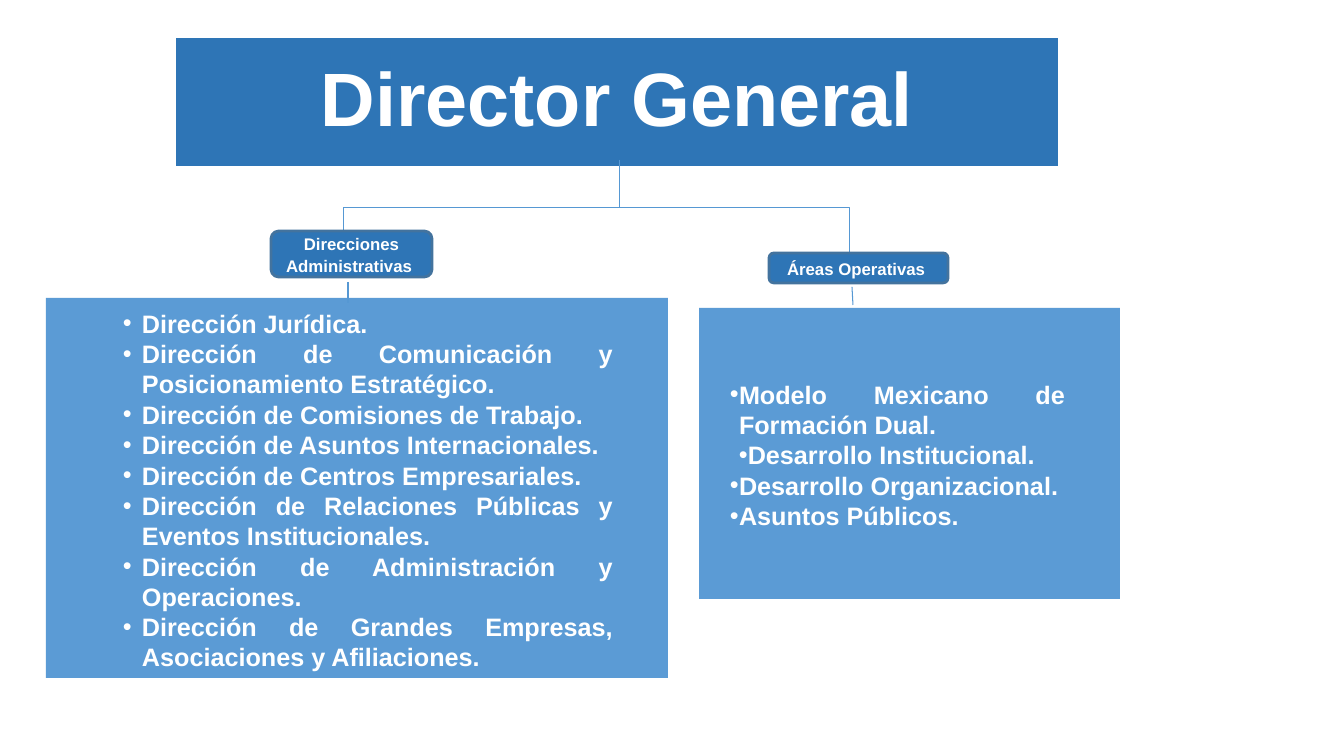
from dataclasses import dataclass

from lxml import etree
from pptx import Presentation
from pptx.dml.color import RGBColor
from pptx.enum.shapes import MSO_CONNECTOR, MSO_SHAPE
from pptx.enum.text import MSO_ANCHOR, MSO_AUTO_SIZE, PP_ALIGN
from pptx.oxml.ns import qn
from pptx.util import Pt

RECTANGLE = MSO_SHAPE.RECTANGLE
ROUNDED = MSO_SHAPE.ROUNDED_RECTANGLE
LEFT_BRACE = MSO_SHAPE.LEFT_BRACE
STRAIGHT = MSO_CONNECTOR.STRAIGHT
TOP, MIDDLE = MSO_ANCHOR.TOP, MSO_ANCHOR.MIDDLE
CENTER, JUSTIFY = PP_ALIGN.CENTER, PP_ALIGN.JUSTIFY
NO_AUTOFIT = MSO_AUTO_SIZE.NONE

DARK_BLUE = RGBColor(0x2E, 0x75, 0xB6)
LIGHT_BLUE = RGBColor(0x5B, 0x9B, 0xD5)
OUTLINE_BLUE = RGBColor(0x43, 0x73, 0x9E)
LINE_BLUE = RGBColor(0x56, 0x98, 0xD3)
WHITE = RGBColor(0xFF, 0xFF, 0xFF)

SLIDE_WIDTH, SLIDE_HEIGHT = 1344, 756
EMU_PER_PX = 12192000 / SLIDE_WIDTH
TITLE_BOX = (176, 38, 882, 128)
BRACE_BOX = (549, -45, 95, 506)
PADDING = 10
RIGHT_INSET = 55


@dataclass(frozen=True)
class Item:
    text: str
    margin: int
    indent: int


@dataclass(frozen=True)
class Panel:
    box: tuple[int, int, int, int]
    top_inset: int
    items: list[Item]


@dataclass(frozen=True)
class Label:
    box: tuple[int, int, int, int]
    text: str


@dataclass(frozen=True)
class Link:
    start: tuple[int, int]
    end: tuple[int, int]


ADMINISTRATIVE = [
    "Dirección Jurídica.",
    "Dirección de Comunicación y Posicionamiento Estratégico.",
    "Dirección de Comisiones de Trabajo.",
    "Dirección de Asuntos Internacionales.",
    "Dirección de Centros Empresariales.",
    "Dirección de Relaciones Públicas y Eventos Institucionales.",
    "Dirección de Administración y Operaciones.",
    "Dirección de Grandes Empresas, Asociaciones y Afiliaciones.",
]
OPERATIVE = [
    Item("Modelo Mexicano de Formación Dual.", 30, -9),
    Item("Desarrollo Institucional.", 20, 10),
    Item("Desarrollo Organizacional.", 30, -9),
    Item("Asuntos Públicos.", 30, -9),
]
PANELS = [
    Panel((699, 308, 421, 291), 71, OPERATIVE),
    Panel((46, 298, 622, 380), PADDING, [Item(text, 86, -19) for text in ADMINISTRATIVE]),
]
LABELS = [
    Label((769, 253, 179, 30), "Áreas Operativas "),
    Label((271, 231, 161, 46), "Direcciones Administrativas "),
]
LINKS = [Link((348, 282), (348, 303)), Link((852, 287), (853, 305))]


def px(length: int) -> int:
    return round(length * EMU_PER_PX)


def set_attributes(target, values: dict) -> None:
    for name, value in values.items():
        setattr(target, name, value)


def set_frame(text_frame, anchor, insets: tuple[int, int, int, int]) -> None:
    """Apply anchor, wrapping and left, top, right, bottom insets."""
    left, top, right, bottom = map(px, insets)
    set_attributes(text_frame, {
        "word_wrap": True, "auto_size": NO_AUTOFIT, "vertical_anchor": anchor,
        "margin_left": left, "margin_top": top,
        "margin_right": right, "margin_bottom": bottom,
    })


def write(paragraph, text: str, size: int, values: dict) -> None:
    set_attributes(paragraph, values)
    run = paragraph.add_run()
    run.text = text
    set_attributes(run.font, {"name": "Arial", "size": Pt(size), "bold": True})
    run.font.color.rgb = WHITE


def add_bullet(paragraph, item: Item) -> None:
    properties = paragraph._p.get_or_add_pPr()
    properties.set("marL", str(px(item.margin)))
    properties.set("indent", str(px(item.indent)))
    color = etree.SubElement(properties, qn("a:buClr"))
    etree.SubElement(color, qn("a:srgbClr"), val=str(WHITE))
    etree.SubElement(properties, qn("a:buFont"), typeface="Arial")
    etree.SubElement(properties, qn("a:buChar"), char="•")


def add_filled_shape(slide, kind, box: tuple[int, int, int, int], fill: RGBColor):
    shape = slide.shapes.add_shape(kind, *map(px, box))
    shape.shadow.inherit = False
    shape.fill.solid()
    shape.fill.fore_color.rgb = fill
    shape.line.fill.background()
    return shape


def set_line(line, color: RGBColor, width: float) -> None:
    line.color.rgb = color
    line.width = Pt(width)


def add_title(slide) -> None:
    title = slide.shapes.title
    names = ("left", "top", "width", "height")
    set_attributes(title, dict(zip(names, map(px, TITLE_BOX))))
    title.fill.solid()
    title.fill.fore_color.rgb = DARK_BLUE
    set_frame(title.text_frame, MIDDLE, (PADDING,) * 4)
    write(title.text_frame.paragraphs[0], "Director General", 54,
          {"alignment": CENTER, "line_spacing": 0.9})


def add_panel(slide, panel: Panel) -> None:
    text_frame = add_filled_shape(slide, RECTANGLE, panel.box, LIGHT_BLUE).text_frame
    set_frame(text_frame, TOP, (PADDING, panel.top_inset, RIGHT_INSET, PADDING))
    for index, item in enumerate(panel.items):
        paragraph = text_frame.add_paragraph() if index else text_frame.paragraphs[0]
        add_bullet(paragraph, item)
        space_before = Pt(0.1 if index else 0)
        write(paragraph, item.text, 18,
              {"alignment": JUSTIFY, "line_spacing": 1.0, "space_before": space_before})


def add_brace(slide) -> None:
    brace = slide.shapes.add_shape(LEFT_BRACE, *map(px, BRACE_BOX))
    brace.shadow.inherit = False
    brace.rotation = 90
    brace.adjustments[0] = 0
    brace.adjustments[1] = 0.455
    brace.fill.background()
    set_line(brace.line, LINE_BLUE, 0.75)


def add_label(slide, label: Label) -> None:
    shape = add_filled_shape(slide, ROUNDED, label.box, DARK_BLUE)
    set_line(shape.line, OUTLINE_BLUE, 2)
    set_frame(shape.text_frame, MIDDLE, (10, 5, 10, 5))
    write(shape.text_frame.paragraphs[0], label.text, 12,
          {"alignment": CENTER, "line_spacing": 1.07, "space_after": Pt(8)})


def add_link(slide, link: Link) -> None:
    connector = slide.shapes.add_connector(STRAIGHT, *map(px, link.start + link.end))
    set_line(connector.line, LINE_BLUE, 0.75)
    etree.SubElement(connector._element.spPr, qn("a:effectLst"))


def main() -> None:
    presentation = Presentation()
    presentation.slide_width = px(SLIDE_WIDTH)
    presentation.slide_height = px(SLIDE_HEIGHT)
    slide = presentation.slides.add_slide(presentation.slide_layouts.get_by_name("Title Only"))
    add_title(slide)
    for panel in PANELS:
        add_panel(slide, panel)
    add_brace(slide)
    for label in LABELS:
        add_label(slide, label)
    for link in LINKS:
        add_link(slide, link)
    presentation.save("out.pptx")


if __name__ == "__main__":
    main()
